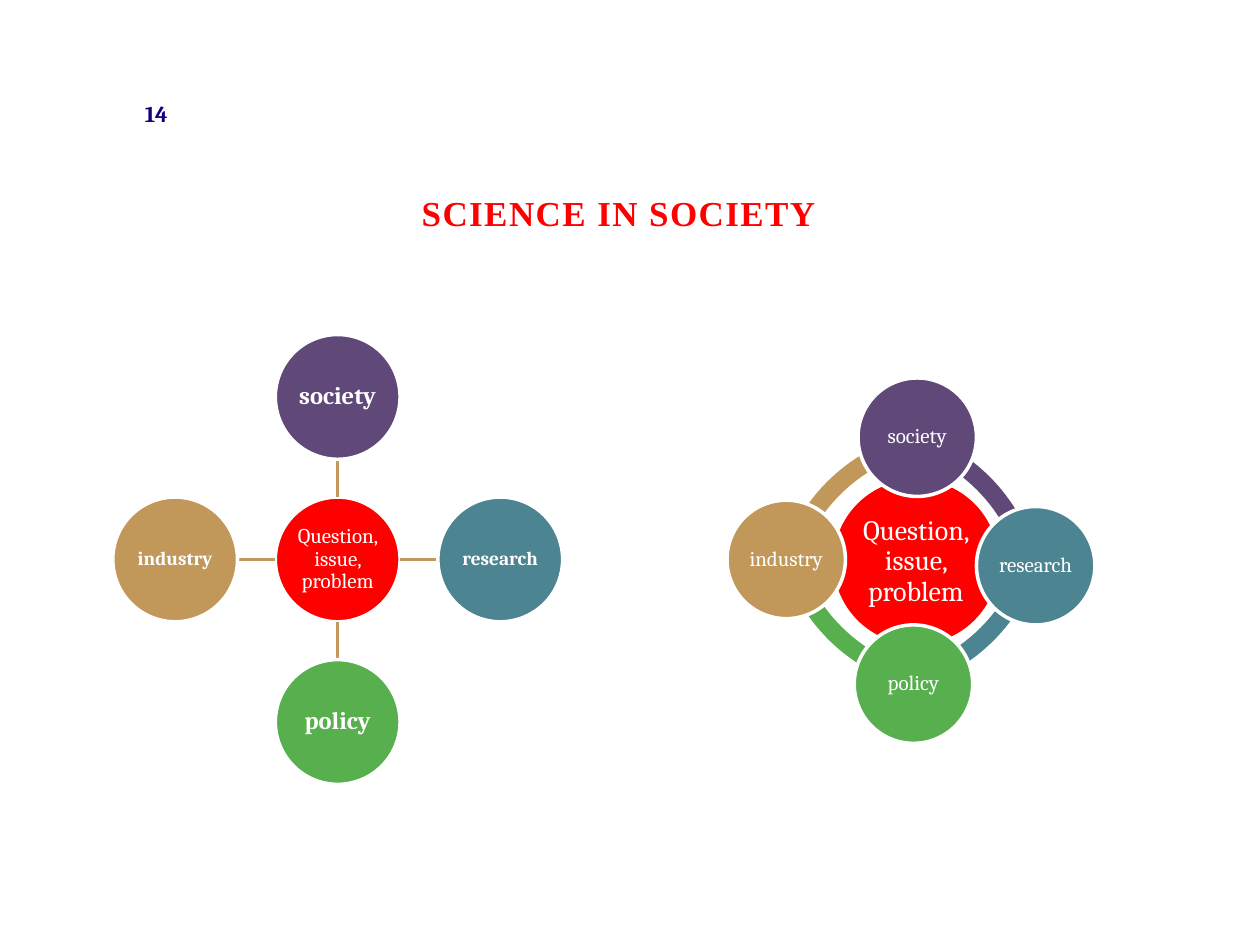
from dataclasses import dataclass
from typing import Any

from lxml.etree import SubElement
from pptx import Presentation
from pptx.dml.color import RGBColor
from pptx.enum.shapes import MSO_CONNECTOR as Connector, MSO_SHAPE as Shape
from pptx.enum.text import MSO_ANCHOR as Anchor, PP_ALIGN as Align
from pptx.oxml.ns import qn
from pptx.util import Inches, Pt

WHITE = RGBColor(0xFF, 0xFF, 0xFF)
RED = RGBColor(0xFF, 0x00, 0x00)
NAVY = RGBColor(0x10, 0x00, 0x7B)
PURPLE = RGBColor(0x60, 0x48, 0x78)
TEAL = RGBColor(0x4C, 0x84, 0x92)
GREEN = RGBColor(0x57, 0xAF, 0x4D)
TAN = RGBColor(0xC1, 0x98, 0x59)

QUESTION = "Question, issue, problem"


@dataclass
class Painter:
    """Draws styled elements on the current page."""

    page: Any
    font: str = "Cambria"
    outline: Any = Pt(2)

    def add_text(self, box, text, inset=0, anchor=Anchor.TOP, spacing=None, **font):
        frame = box.text_frame
        margin = Inches(inset)
        layout = {"word_wrap": True, "vertical_anchor": anchor,
                  "margin_left": margin, "margin_right": margin,
                  "margin_top": margin, "margin_bottom": margin}
        for name, value in layout.items():
            setattr(frame, name, value)
        para = frame.paragraphs[0]
        para.alignment = Align.CENTER
        para.line_spacing = spacing
        span = para.add_run()
        span.text = text
        color = font.pop("color")
        for name, value in {"name": self.font, **font}.items():
            setattr(span.font, name, value)
        span.font.color.rgb = color
        return span

    def label(self, text, left, top, width, height, **style):
        box = self.page.shapes.add_textbox(
            Inches(left), Inches(top), Inches(width), Inches(height))
        return self.add_text(box, text, **style)

    def shape(self, kind, x, y, size, fill):
        shape = self.page.shapes.add_shape(
            kind, Inches(x - size / 2), Inches(y - size / 2), Inches(size), Inches(size))
        shape.shadow.inherit = False
        shape.fill.solid()
        shape.fill.fore_color.rgb = fill
        return shape

    def circle(self, text, x, y, size, fill, points, inset, bold=False):
        circle = self.shape(Shape.OVAL, x, y, size, fill)
        circle.line.color.rgb = WHITE
        circle.line.width = self.outline
        self.add_text(circle, text, inset, Anchor.MIDDLE, 0.9,
                      size=Pt(points), bold=bold, color=WHITE)

    def arc(self, x, y, size, fill, adjustments):
        arc = self.shape(Shape.BLOCK_ARC, x, y, size, fill)
        arc.line.fill.background()
        for index, value in enumerate(adjustments):
            arc.adjustments[index] = value

    def spoke(self, x1, y1, x2, y2):
        line = self.page.shapes.add_connector(
            Connector.STRAIGHT, Inches(x1), Inches(y1), Inches(x2), Inches(y2))
        line.line.color.rgb = TAN
        line.line.width = self.outline
        SubElement(line._element.spPr, qn("a:effectLst"))


def draw_hub(painter):
    x, y, size, reach, spoke = 2.68, 4.44, 0.99, 1.29, 0.35
    painter.circle(QUESTION, x, y, size, RED, 12, 0.01)
    satellites = [("society", 0, -1, PURPLE, 14), ("research", 1, 0, TEAL, 11),
                  ("policy", 0, 1, GREEN, 14), ("industry", -1, 0, TAN, 11)]
    near, far = size / 2, size / 2 + spoke
    for text, dx, dy, fill, points in satellites:
        painter.spoke(x + dx * near, y + dy * near, x + dx * far, y + dy * far)
        painter.circle(text, x + dx * reach, y + dy * reach, size, fill, points, 0.01, True)


def draw_ring(painter):
    arcs = [(7.59, 4.85, TAN, 118.15, 154.39), (7.6, 4.05, GREEN, 62.76, 98.6),
            (6.86, 4.06, TEAL, 10.67, 44.68), (6.83, 4.81, PURPLE, 173.06, 208.21)]
    for x, y, fill, start, end in arcs:
        painter.arc(x, y, 2.9, fill, (start, end, 0.05))
    painter.circle(QUESTION, 7.27, 4.46, 1.34, RED, 16, 0.02)
    satellites = [("society", 7.28, 3.47, PURPLE), ("research", 8.22, 4.49, TEAL),
                  ("policy", 7.25, 5.43, GREEN), ("industry", 6.24, 4.44, TAN)]
    for text, x, y, fill in satellites:
        painter.circle(text, x, y, 0.94, fill, 12, 0.02)


def main():
    deck = Presentation()
    deck.slide_width, deck.slide_height = Inches(10), Inches(7.5)
    painter = Painter(deck.slides.add_slide(deck.slide_layouts[6]))
    title = painter.label("SCIENCE IN SOCIETY", 0.01, 1.55, 9.8, 0.67, spacing=Pt(22),
                          name="Times New Roman", size=Pt(20), bold=True, color=RED)
    title._r.get_or_add_rPr().set("spc", "80")
    draw_hub(painter)
    painter.label("14", 0.97, 0.79, 0.54, 0.52, size=Pt(13), bold=True, color=NAVY)
    draw_ring(painter)
    deck.save("out.pptx")


if __name__ == "__main__":
    main()
